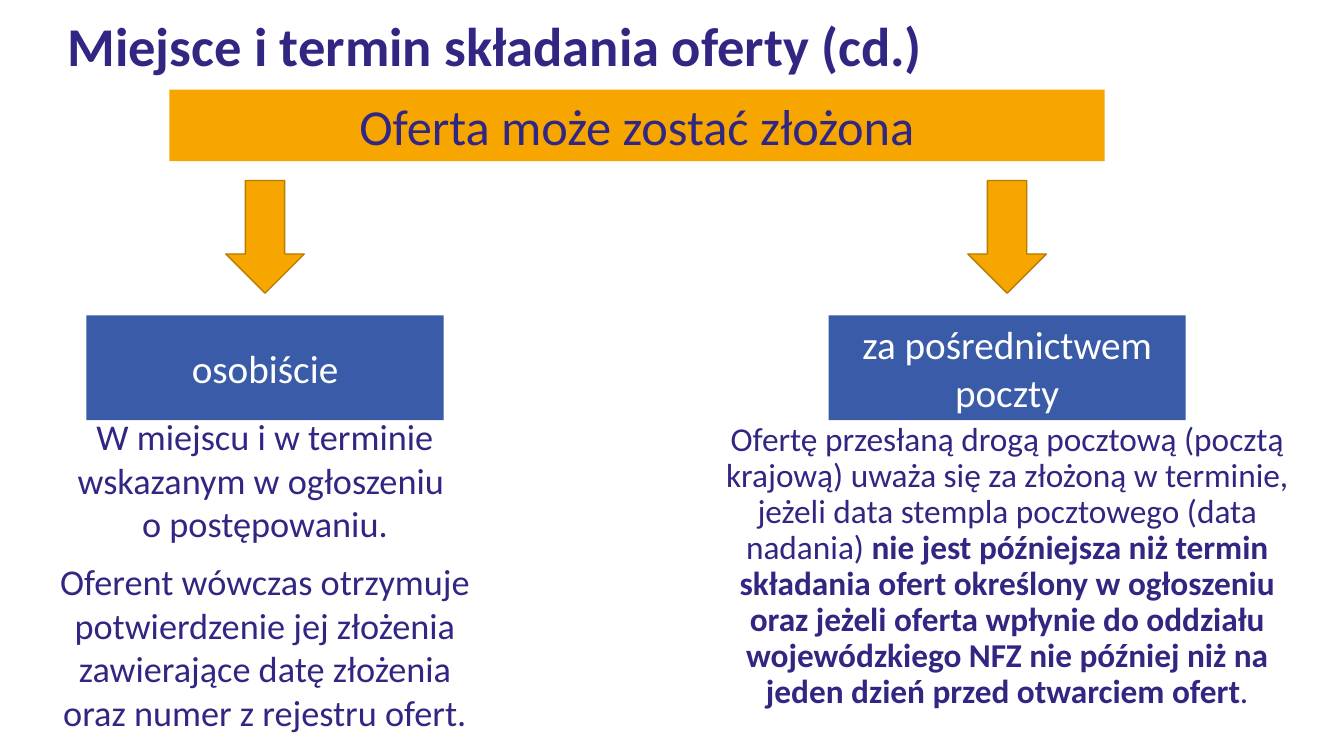
from pptx import Presentation
from pptx.dml.color import RGBColor
from pptx.enum.shapes import MSO_SHAPE
from pptx.enum.text import MSO_ANCHOR, PP_ALIGN
from pptx.util import Cm, Pt

NAVY = RGBColor(0x31, 0x27, 0x83)
ORANGE = RGBColor(0xF7, 0xA6, 0x00)
BROWN = RGBColor(0xB7, 0x7B, 0x00)
BLUE = RGBColor(0x3A, 0x5B, 0xA7)
WHITE = RGBColor(0xFF, 0xFF, 0xFF)
RECTANGLE, DOWN_ARROW = MSO_SHAPE.RECTANGLE, MSO_SHAPE.DOWN_ARROW
LEFT, CENTER = PP_ALIGN.LEFT, PP_ALIGN.CENTER
MIDDLE = MSO_ANCHOR.MIDDLE

ARROW_WIDTH = 1.98
BOX_WIDTH = 9

# Column centre (cm), heading, text width, text height, size, line spacing,
# and paragraphs made of (text, bold) runs
WAYS_TO_SUBMIT = [
    (6.68, "osobiście", 11, 8.31, 25.9, 1.0, [
        [("W miejscu i w terminie wskazanym w ogłoszeniu \vo postępowaniu.", False)],
        [("Oferent wówczas otrzymuje potwierdzenie jej złożenia zawierające "
          "datę złożenia oraz numer z rejestru ofert.", False)],
    ]),
    (25.38, "za pośrednictwem poczty", 15.09, 7.92, 23.8, 0.9, [
        [("Ofertę przesłaną drogą pocztową (pocztą krajową) uważa się za złożoną "
          "w terminie, jeżeli data stempla pocztowego (data nadania) ", False),
         ("nie jest późniejsza niż termin składania ofert określony w ogłoszeniu "
          "oraz jeżeli oferta wpłynie do oddziału wojewódzkiego NFZ nie później "
          "niż na jeden dzień przed otwarciem ofert", True),
         (".", False)],
    ]),
]


class SlideBuilder:
    font_name = "Calibri"
    paragraph_gap = Pt(10)

    def __init__(self, slide):
        self.slide = slide

    def fill_text(self, frame, paragraphs, size, color, align=CENTER, spacing=1.0):
        """Fill a text frame with paragraphs given as lists of (text, bold) runs."""
        frame.word_wrap = True
        frame.vertical_anchor = MIDDLE
        for index, runs in enumerate(paragraphs):
            paragraph = frame.add_paragraph() if index else frame.paragraphs[0]
            paragraph.alignment = align
            paragraph.line_spacing = spacing
            paragraph.space_before = self.paragraph_gap if index else Pt(0)
            for text, bold in runs:
                if "\v" in text:
                    paragraph.text = text
                else:
                    paragraph.add_run().text = text
                for run in paragraph.runs:
                    if run.font.size is None:
                        run.font.name = self.font_name
                        run.font.size = Pt(size)
                        run.font.bold = bold
                        run.font.color.rgb = color

    def text(self, left, top, width, height, paragraphs, size, **style):
        box = self.slide.shapes.add_textbox(Cm(left), Cm(top), Cm(width), Cm(height))
        self.fill_text(box.text_frame, paragraphs, size, NAVY, **style)

    def shape(self, kind, left, top, width, height, fill):
        shape = self.slide.shapes.add_shape(
            kind, Cm(left), Cm(top), Cm(width), Cm(height))
        shape.shadow.inherit = False
        shape.fill.solid()
        shape.fill.fore_color.rgb = fill
        return shape

    def box(self, left, top, width, height, fill, label, size, color):
        box = self.shape(RECTANGLE, left, top, width, height, fill)
        box.line.fill.background()
        self.fill_text(box.text_frame, [[(label, False)]], size, color)

    def arrow(self, left, top, width, height):
        arrow = self.shape(DOWN_ARROW, left, top, width, height, ORANGE)
        arrow.line.color.rgb = BROWN
        arrow.line.width = Pt(1)


def main():
    presentation = Presentation()
    presentation.slide_width = Cm(33.87)
    presentation.slide_height = Cm(19.05)
    blank_layout = presentation.slide_layouts[6]
    builder = SlideBuilder(presentation.slides.add_slide(blank_layout))

    builder.text(1.45, 0, 29.21, 2.44,
                 [[("Miejsce i termin składania oferty (cd.)", True)]],
                 39, align=LEFT, spacing=0.9)
    builder.box(4.27, 2.26, 23.57, 1.8, ORANGE,
                "Oferta może zostać złożona", 36, NAVY)
    for center, heading, width, height, size, spacing, details in WAYS_TO_SUBMIT:
        builder.arrow(center - ARROW_WIDTH / 2, 4.55, ARROW_WIDTH, 2.84)
        builder.box(center - BOX_WIDTH / 2, 7.95, BOX_WIDTH, 2.64, BLUE,
                    heading, 28, WHITE)
        builder.text(center - width / 2, 10.31, width, height, details,
                     size, spacing=spacing)
    presentation.save("out.pptx")


if __name__ == "__main__":
    main()
